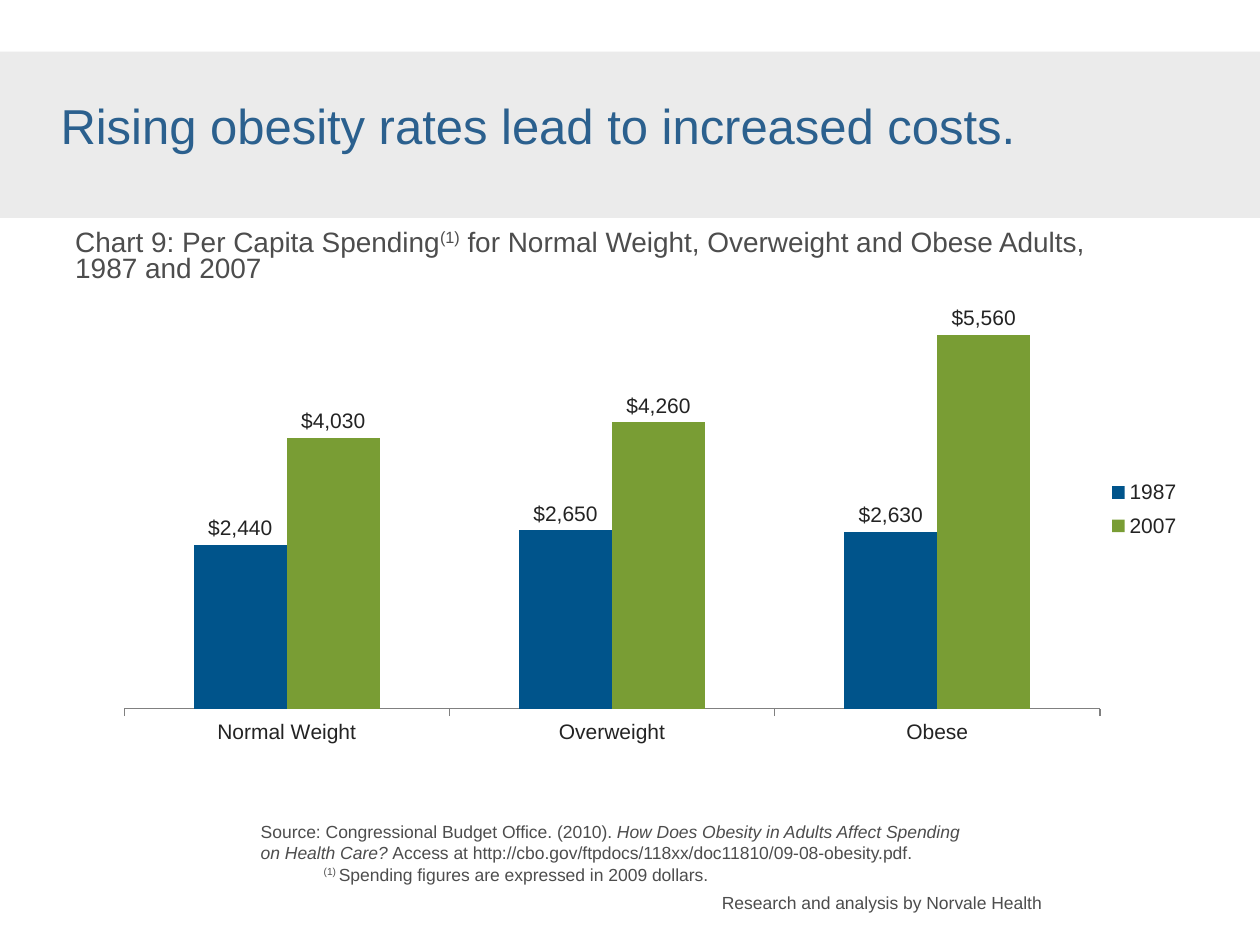
from lxml import etree
from pptx import Presentation
from pptx import util as u
from pptx.chart.data import CategoryChartData
from pptx.dml.color import RGBColor
from pptx.enum import chart as ch, shapes
from pptx.oxml.ns import qn

Pt = u.Pt
FONT = "Arial"
C = {"band": "EBEBEB", "title": "2B608E", "body": "4D4D4D", "chart": "232323",
     "axis": "808080", "1987": "00548B", "2007": "799D34"}
MONEY = '"$"#,##0'

# Content: each box is a list of paragraphs, each paragraph a list of (text, style) runs
TITLE = [[("Rising obesity rates lead to increased costs.", "")]]
CHART_TITLE = [
    [("Chart 9: Per Capita Spending", ""), ("(1)", "super"),
     (" for Normal Weight, Overweight and Obese Adults,", "")],
    [("1987 and 2007", "")],
]
SOURCE = [
    [("Source: Congressional Budget Office. (2010). ", ""),
     ("How Does Obesity in Adults Affect Spending on Health Care? ", "italic"),
     ("Access at http://cbo.gov/ftpdocs/118xx/doc11810/09-08-obesity.pdf.", "")],
    [("(1) ", "super"), ("Spending figures are expressed in 2009 dollars.", "")],
]
CREDIT = [[("Research and analysis by Norvale Health", "")]]
CATEGORIES = ["Normal Weight", "Overweight", "Obese"]
SPENDING = {"1987": [2440, 2650, 2630], "2007": [4030, 4260, 5560]}


def rgb(name):
    return RGBColor.from_string(C[name])


def add_text(slide, box, paragraphs, size, color, spacing=None):
    tf = slide.shapes.add_textbox(*map(Pt, box)).text_frame
    tf.word_wrap = True
    tf.margin_left = tf.margin_top = tf.margin_right = tf.margin_bottom = 0
    for i, runs in enumerate(paragraphs):
        p = tf.add_paragraph() if i else tf.paragraphs[0]
        if spacing:
            p.line_spacing = spacing
        for content, style in runs:
            r = p.add_run()
            r.text = content
            r.font.name, r.font.size = FONT, Pt(size)
            r.font.color.rgb = rgb(color)
            if style == "italic":
                r.font.italic = True
            elif style == "super":
                r._r.get_or_add_rPr().set("baseline", "30000")
    return tf


def set_layout(parent, index, x, y, w, h, inner=False):
    """Fix a chart part's place, in fractions of the chart."""
    for old in parent.findall(qn("c:layout")):
        parent.remove(old)
    layout = etree.Element(qn("c:layout"))
    manual = etree.SubElement(layout, qn("c:manualLayout"))
    values = [("layoutTarget", "inner")] if inner else []
    values += [("xMode", "edge"), ("yMode", "edge"),
               ("x", x), ("y", y), ("w", w), ("h", h)]
    for tag, val in values:
        etree.SubElement(manual, qn("c:" + tag)).set("val", str(val))
    parent.insert(index, layout)


def chart_font(font, size):
    font.name, font.size = FONT, Pt(size)
    font.color.rgb = rgb("chart")


def add_spending_chart(slide, box):
    data = CategoryChartData(number_format=MONEY)
    data.categories = CATEGORIES
    for year, values in SPENDING.items():
        data.add_series(year, values)
    chart = slide.shapes.add_chart(
        ch.XL_CHART_TYPE.COLUMN_CLUSTERED, *map(Pt, box), data).chart
    chart.has_title = False
    chart_font(chart.font, 18)

    # Columns and their labels
    plot = chart.plots[0]
    plot.gap_width, plot.overlap, plot.vary_by_categories = 150, 0, False
    for s in plot.series:
        s.format.fill.solid()
        s.format.fill.fore_color.rgb = rgb(s.name)
        labels = s.data_labels
        labels.show_value = True
        labels.number_format, labels.number_format_is_linked = MONEY, False
        labels.position = ch.XL_LABEL_POSITION.OUTSIDE_END
        chart_font(labels.font, 12)

    # Axes
    values = chart.value_axis
    values.visible = values.has_major_gridlines = False
    values.minimum_scale, values.maximum_scale = 0, 6000
    cats = chart.category_axis
    cats.major_tick_mark = ch.XL_TICK_MARK.OUTSIDE
    cats.format.line.color.rgb = rgb("axis")
    cats.format.line.width = Pt(0.75)
    chart_font(cats.tick_labels.font, 12)

    # Legend
    chart.has_legend = True
    legend = chart.legend
    legend.position = ch.XL_LEGEND_POSITION.RIGHT
    legend.include_in_layout = False
    chart_font(legend.font, 12)

    plot_area = chart._chartSpace.chart.plotArea
    set_layout(plot_area, 0, 0.02, 0.02, 0.88, 0.88, inner=True)
    el = legend._element
    after_pos = 0 if el.find(qn("c:legendPos")) is None else 1
    set_layout(el, after_pos, 0.9, 0.38, 0.08, 0.17)


prs = Presentation()
prs.slide_width, prs.slide_height = Pt(720), Pt(540)
slide = prs.slides.add_slide(prs.slide_layouts[6])

# Title band
sp = slide.shapes.add_shape(shapes.MSO_SHAPE.RECTANGLE, 0, Pt(29.5), Pt(720), Pt(95))
sp.shadow.inherit = False
sp.fill.solid()
sp.fill.fore_color.rgb = rgb("band")
sp.line.fill.background()

# Headings, chart and notes
add_text(slide, (412.5, 509.8, 190, 12), CREDIT, 10, "body")
add_text(slide, (34.6, 61.2, 648, 27), TITLE, 28, "title", 0.8)
source = add_text(slide, (149, 469.4, 409, 48), SOURCE, 10, "body")
source.paragraphs[1]._p.get_or_add_pPr().set("indent", str(Pt(36)))
add_spending_chart(slide, (58.3, 169.2, 633.6, 262))
add_text(slide, (43, 131.8, 632, 31), CHART_TITLE, 16, "body", 0.8)

prs.save("out.pptx")
